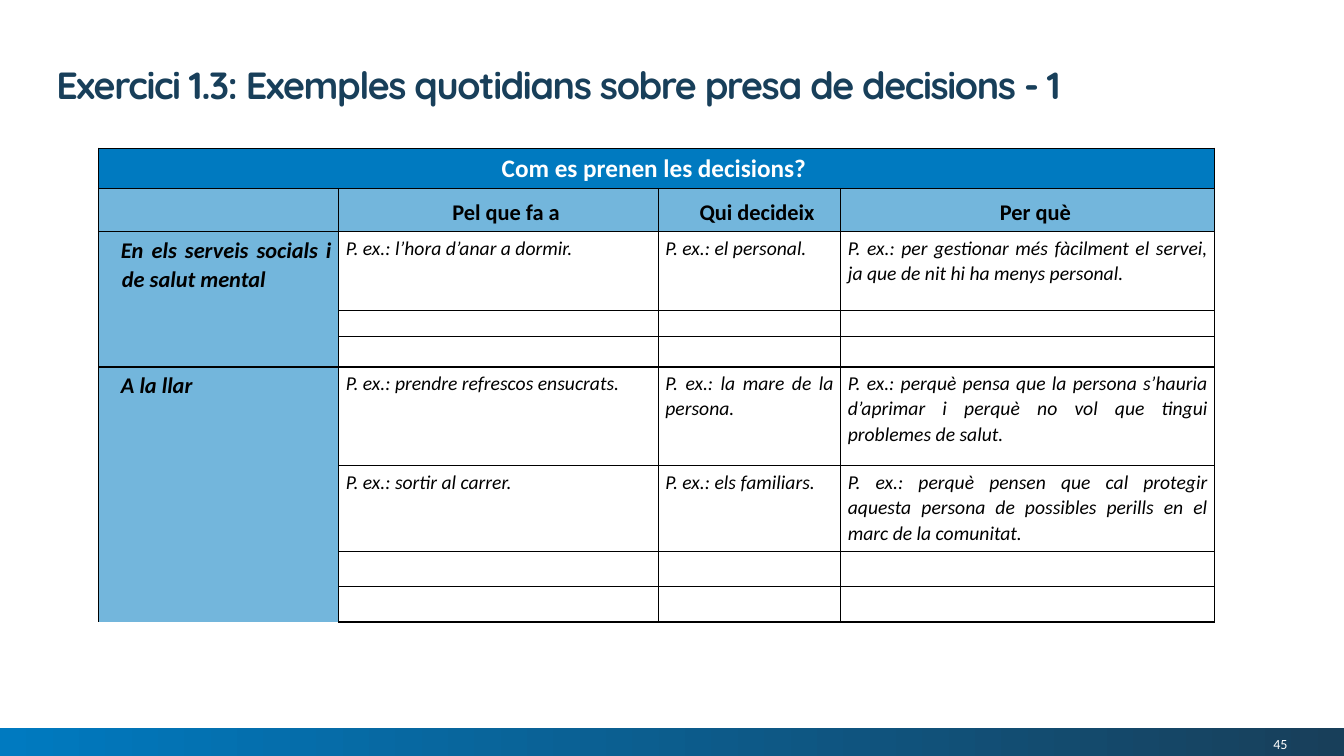
import pptx
import pptx.dml.color
import pptx.enum.dml
import pptx.enum.shapes
import pptx.enum.text
import pptx.oxml
import pptx.oxml.ns
import pptx.util

Inches = pptx.util.Inches
Pt = pptx.util.Pt
ALIGN = pptx.enum.text.PP_ALIGN
ANCHOR = pptx.enum.text.MSO_ANCHOR

WIDTH, HEIGHT = 13.33, 7.5
BLUE, NAVY, SKY, WHITE, BLACK = "007AC0", "183F5A", "73B6DC", "FFFFFF", "000000"
COLUMNS = [2.38, 3.17, 1.81, 3.71]
ROWS = [0.4, 0.43, 0.78, 0.26, 0.3, 0.98, 0.85, 0.35, 0.35]

HEADING = "Com es prenen les decisions? "
COLUMN_HEADS = ["Pel que fa a", "Qui decideix", "Per què"]
SETTINGS = [(2, 4, "En els serveis socials i de salut mental "), (5, 8, "A la llar ")]
EXAMPLES = {
    2: ["P. ex.: l’hora d’anar a dormir.",
        "P. ex.: el personal. ",
        "P. ex.: per gestionar més fàcilment el servei, ja que de nit hi ha menys personal. "],
    5: ["P. ex.: prendre refrescos ensucrats.",
        "P. ex.: la mare de la persona.",
        "P. ex.: perquè pensa que la persona s’hauria d’aprimar i perquè no vol que "
        "tingui problemes de salut. "],
    6: ["P. ex.: sortir al carrer.",
        "P. ex.: els familiars. ",
        "P. ex.: perquè pensen que cal protegir aquesta persona de possibles perills "
        "en el marc de la comunitat. "],
}


def color(value):
    return pptx.dml.color.RGBColor.from_string(value)


def write(frame, text, size, ink=BLACK, font="Calibri", bold=False, italic=False,
          align=ALIGN.LEFT, spacing=None, indent=None, tracking=None):
    paragraph = frame.paragraphs[0]
    paragraph.alignment = align
    if spacing is not None:
        paragraph.line_spacing = spacing
    if indent is not None:
        properties = paragraph._p.get_or_add_pPr()
        properties.set("marL", str(Inches(indent)))
        properties.set("indent", str(Inches(-0.01)))
    run = paragraph.add_run()
    run.text = text
    run.font.name, run.font.size = font, Pt(size)
    run.font.bold, run.font.italic = bold, italic
    run.font.color.rgb = color(ink)
    if tracking is not None:
        run._r.get_or_add_rPr().set("spc", str(tracking))


def set_borders(cell, sides):
    properties = cell._tc.get_or_add_tcPr()
    namespace = pptx.oxml.ns.nsdecls("a")
    for position, side in enumerate("LRTB"):
        paint = (f'<a:solidFill><a:srgbClr val="{BLACK}"/></a:solidFill>'
                 if side in sides else "<a:noFill/>")
        properties.insert(position, pptx.oxml.parse_xml(
            f'<a:ln{side} {namespace} w="{Pt(1)}">{paint}</a:ln{side}>'))


def shrink_empty(cell):
    """Keep a blank cell from stretching its row."""
    paragraph = cell.text_frame.paragraphs[0]._p
    paragraph.append(pptx.oxml.parse_xml(
        f'<a:endParaRPr {pptx.oxml.ns.nsdecls("a")} sz="800"/>'))


def set_insets(cell):
    cell.margin_left = cell.margin_right = Inches(0.07)
    cell.margin_top, cell.margin_bottom = Inches(0.03), 0


def add_title(slide, left, top, width, height):
    title = slide.shapes.title
    title.left, title.top = Inches(left), Inches(top)
    title.width, title.height = Inches(width), Inches(height)
    frame = title.text_frame
    frame.auto_size = pptx.enum.text.MSO_AUTO_SIZE.NONE
    frame.vertical_anchor = ANCHOR.TOP
    write(frame, "Exercici 1.3: Exemples quotidians sobre presa de decisions - 1", 27,
          ink=NAVY, font="Quicksand", bold=True, spacing=Pt(33), tracking=-100)


def add_decisions(slide, left, top):
    table = slide.shapes.add_table(
        len(ROWS), len(COLUMNS), Inches(left), Inches(top),
        Inches(sum(COLUMNS)), Inches(sum(ROWS))).table
    table.first_row = table.horz_banding = False
    for column, width in zip(table.columns, COLUMNS):
        column.width = Inches(width)
    for row, height in zip(table.rows, ROWS):
        row.height = Inches(height)

    table.cell(0, 0).merge(table.cell(0, 3))
    write(table.cell(0, 0).text_frame, HEADING, 18, ink=WHITE, bold=True, align=ALIGN.CENTER)
    for number, head in enumerate(COLUMN_HEADS, 1):
        cell = table.cell(1, number)
        set_insets(cell)
        cell.vertical_anchor = ANCHOR.MIDDLE
        write(cell.text_frame, head, 16, bold=True, align=ALIGN.CENTER,
              spacing=1.07, indent=0.16)
    for first, last, setting in SETTINGS:
        cell = table.cell(first, 0)
        cell.merge(table.cell(last, 0))
        set_insets(cell)
        write(cell.text_frame, setting, 16, bold=True, italic=True, align=ALIGN.JUSTIFY,
              spacing=1.07, indent=0.16)
    for row, examples in EXAMPLES.items():
        for number, example in enumerate(examples, 1):
            cell = table.cell(row, number)
            set_insets(cell)
            write(cell.text_frame, example, 14, italic=True, align=ALIGN.JUSTIFY,
                  spacing=1.07, indent=0)

    last_setting = SETTINGS[-1][0]
    for row in range(len(ROWS)):
        for number in range(len(COLUMNS)):
            cell = table.cell(row, number)
            if not cell.text_frame.text:
                set_insets(cell)
                shrink_empty(cell)
            if row == 0:
                fill = BLUE
            else:
                fill = SKY if row == 1 or number == 0 else WHITE
            cell.fill.solid()
            cell.fill.fore_color.rgb = color(fill)
            open_bottom = number == 0 and row >= last_setting
            set_borders(cell, "LRT" if open_bottom else "LRTB")


def add_footer(slide, top, height):
    band = slide.shapes.add_shape(pptx.enum.shapes.MSO_SHAPE.RECTANGLE, 0, Inches(top),
                                  Inches(WIDTH), Inches(height))
    band.shadow.inherit = False
    band.line.fill.background()
    band.fill.gradient()
    band.fill.gradient_angle = 0
    for stop, position, shade in zip(band.fill.gradient_stops, (0, 1), (BLUE, NAVY)):
        stop.position = position
        stop.color.rgb = color(shade)

    number = slide.shapes.add_textbox(Inches(WIDTH - 2.36), Inches(top + 0.04),
                                      Inches(1.8), Inches(height - 0.04))
    frame = number.text_frame
    frame.word_wrap = True
    frame.margin_left = frame.margin_right = frame.margin_top = frame.margin_bottom = 0
    frame.vertical_anchor = ANCHOR.MIDDLE
    write(frame, "45", 10, ink=WHITE, align=ALIGN.RIGHT)


def main():
    deck = pptx.Presentation()
    deck.slide_width, deck.slide_height = Inches(WIDTH), Inches(HEIGHT)
    slide = deck.slides.add_slide(deck.slide_layouts.get_by_name("Title Only"))
    add_footer(slide, HEIGHT - 0.28, 0.28)
    add_title(slide, 0.46, 0.55, 12.21, 0.49)
    add_decisions(slide, 0.98, 1.47)
    deck.save("out.pptx")


if __name__ == "__main__":
    main()
